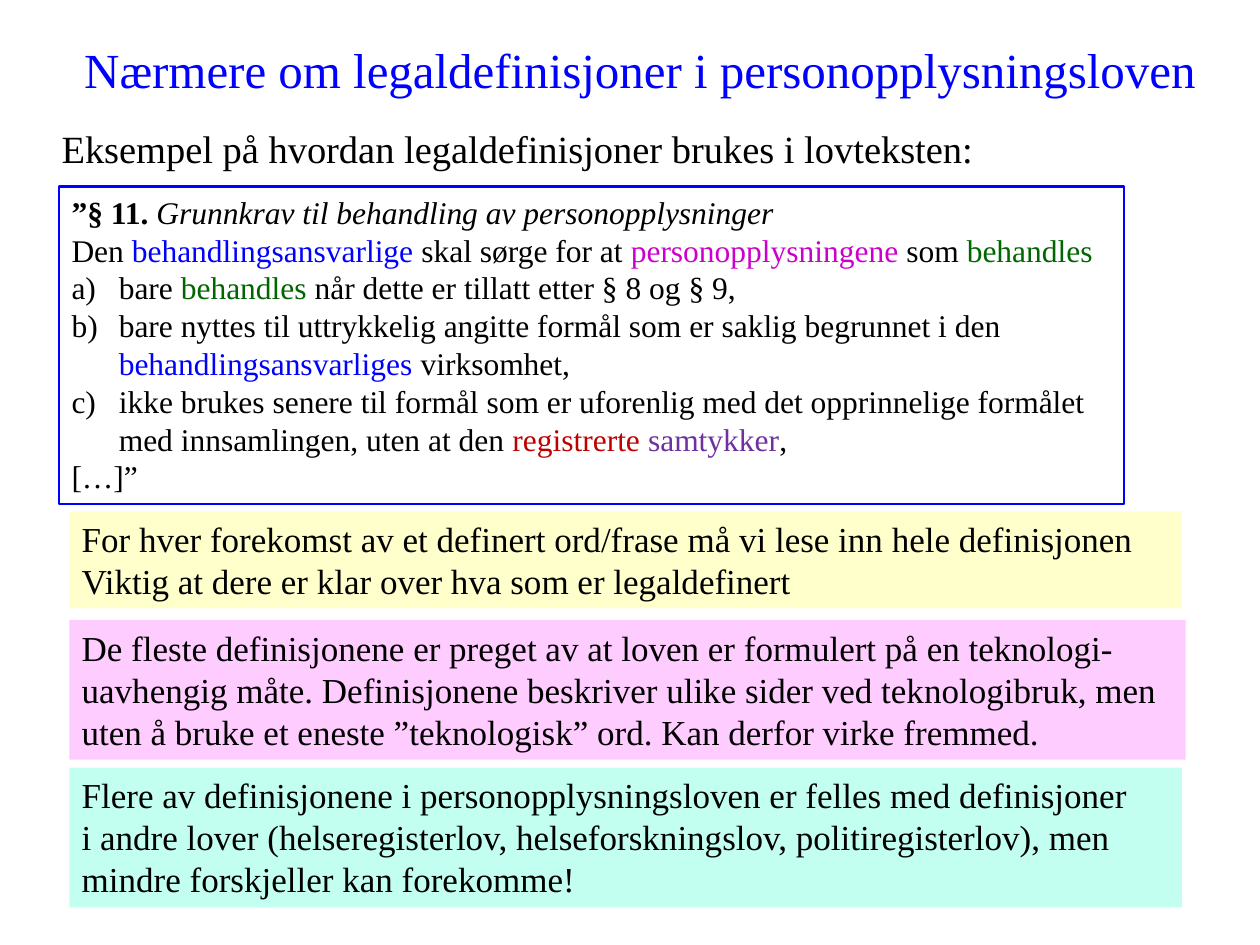
from lxml.etree import SubElement
from pptx import Presentation
from pptx.dml.color import RGBColor
from pptx.enum.shapes import MSO_SHAPE
from pptx.enum.text import MSO_ANCHOR, PP_ALIGN
from pptx.oxml.ns import qn
from pptx.util import Pt

FONT = "Times New Roman"
COLORS = {
    "black": "000000", "white": "FFFFFF", "blue": "0000FF",
    "magenta": "CC00CC", "green": "006600", "red": "C00000",
    "purple": "7030A0", "yellow": "FFFFCC", "pink": "FFCCFF", "mint": "C2FFF0",
}
TITLE = "Nærmere om legaldefinisjoner i personopplysningsloven"
INTRO = "Eksempel på hvordan legaldefinisjoner brukes i lovteksten:"
LAW_INTRO = [
    [("”§ 11. ", "bold"), ("Grunnkrav til behandling av personopplysninger", "italic")],
    [("Den ", "black"), ("behandlingsansvarlige ", "blue"), ("skal sørge for at ", "black"),
     ("personopplysningene", "magenta"), (" som ", "black"), ("behandles", "green")],
]
LAW_ITEMS = [
    [("bare ", "black"), ("behandles", "green"),
     (" når dette er tillatt etter § 8 og § 9,", "black")],
    [("bare nyttes til uttrykkelig angitte formål som er saklig begrunnet i den ", "black"),
     ("behandlingsansvarliges", "blue"), (" virksomhet,", "black")],
    [("ikke brukes senere til formål som er uforenlig med det opprinnelige formålet "
      "med innsamlingen, uten at den ", "black"),
     ("registrerte ", "red"), ("samtykker", "purple"), (",", "black")],
]
LAW_END = [[("[…]”", "black")]]
LAW_BOX = (33.8, 106.6, 608.4, 181.4)
LIST_INDENT = 27
NOTES_LEFT = 39.6
NOTES = [
    ("yellow", 292.3, 635.8, 55.4,
     "For hver forekomst av et definert ord/frase må vi lese inn hele definisjonen\n"
     "Viktig at dere er klar over hva som er legaldefinert"),
    ("pink", 354.2, 637.9, 79.9,
     "De fleste definisjonene er preget av at loven er formulert på en teknologi-\v"
     "uavhengig måte. Definisjonene beskriver ulike sider ved teknologibruk, men\n"
     "uten å bruke et eneste ”teknologisk” ord. Kan derfor virke fremmed."),
    ("mint", 438.7, 635.8, 79.9,
     "Flere av definisjonene i personopplysningsloven er felles med definisjoner\v"
     "i andre lover (helseregisterlov, helseforskningslov, politiregisterlov), "
     "men mindre forskjeller kan forekomme!"),
]


def color(name):
    return RGBColor.from_string(COLORS[name])


def style_run(run, size, color_name):
    run.font.name = FONT
    run.font.size = Pt(size)
    run.font.color.rgb = color(color_name)


def style_text(text_frame, size, color_name="black", alignment=PP_ALIGN.LEFT):
    text_frame.word_wrap = True
    for paragraph in text_frame.paragraphs:
        paragraph.alignment = alignment
        for run in paragraph.runs:
            style_run(run, size, color_name)


def add_label(slide, box, text, size, color_name="black", alignment=PP_ALIGN.LEFT):
    shape = slide.shapes.add_textbox(*map(Pt, box))
    shape.text_frame.text = text
    style_text(shape.text_frame, size, color_name, alignment)
    return shape


def add_panel(slide, box, fill, line=None):
    shape = slide.shapes.add_shape(MSO_SHAPE.RECTANGLE, *map(Pt, box))
    shape.shadow.inherit = False
    shape.fill.solid()
    shape.fill.fore_color.rgb = color(fill)
    if line:
        shape.line.color.rgb = color(line)
        shape.line.width = Pt(1.25)
    else:
        shape.line.fill.background()
    shape.text_frame.vertical_anchor = MSO_ANCHOR.TOP
    return shape


def number_paragraph(paragraph):
    properties = paragraph._p.get_or_add_pPr()
    properties.set("marL", str(Pt(LIST_INDENT)))
    properties.set("indent", str(-Pt(LIST_INDENT)))
    SubElement(properties, qn("a:buFont"), typeface=FONT)
    SubElement(properties, qn("a:buAutoNum"), type="alphaLcParenR")


def add_law_text(text_frame):
    text_frame.word_wrap = True
    for index, parts in enumerate(LAW_INTRO + LAW_ITEMS + LAW_END):
        paragraph = text_frame.add_paragraph() if index else text_frame.paragraphs[0]
        paragraph.alignment = PP_ALIGN.LEFT
        if parts in LAW_ITEMS:
            number_paragraph(paragraph)
        for text, style in parts:
            run = paragraph.add_run()
            run.text = text
            style_run(run, 18, style if style in COLORS else "black")
            run.font.bold = style == "bold"
            run.font.italic = style == "italic"


def main():
    presentation = Presentation()
    presentation.slide_width, presentation.slide_height = Pt(720), Pt(540)
    slide = presentation.slides.add_slide(presentation.slide_layouts[6])

    title = add_label(slide, (39.6, 11.5, 652.3, 56.2), TITLE, 28, "blue", PP_ALIGN.CENTER)
    title.text_frame.vertical_anchor = MSO_ANCHOR.MIDDLE
    add_label(slide, (28.1, 67.7, 541.4, 33.8), INTRO, 22)

    law = add_panel(slide, LAW_BOX, "white", "blue")
    add_law_text(law.text_frame)

    for fill, top, width, height, text in NOTES:
        note = add_panel(slide, (NOTES_LEFT, top, width, height), fill)
        note.text_frame.text = text
        style_text(note.text_frame, 20)

    presentation.save("out.pptx")


if __name__ == "__main__":
    main()
